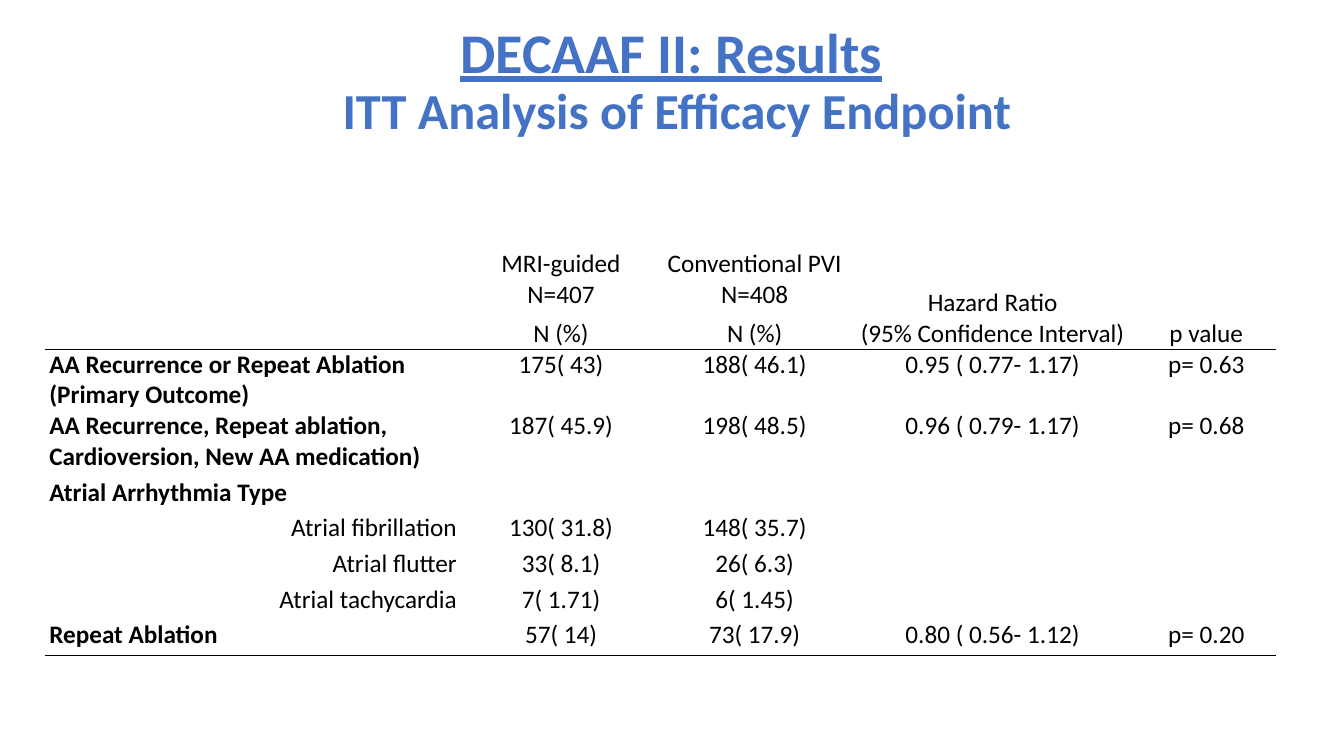
"""Build the DECAAF II efficacy results slide with its table of endpoints."""
from lxml import etree
from pptx import Presentation
from pptx import util as u
from pptx.dml.color import RGBColor
from pptx.enum import text
from pptx.oxml import ns

COLORS = {"title": "4472C4", "body": "000000", "rule": "000000", "cell": "FFFFFF"}
FONT = "Calibri"
COLUMNS = [4.12, 1.99, 1.85, 2.87, 1.37]
ROWS = [0.73, 0.62, 0.61, 0.66] + [1.77 / 5] * 5
HEADER_ROWS = 2
LEFT, CENTER, RIGHT = text.PP_ALIGN.LEFT, text.PP_ALIGN.CENTER, text.PP_ALIGN.RIGHT

HEADERS = {
    (0, 1): ["MRI-guided\vN=407", "N (%)"],
    (0, 2): ["Conventional PVI\vN=408", "N (%)"],
    (1, 3): ["Hazard Ratio\v(95% Confidence Interval)"],
    (1, 4): ["p value"],
}
OUTCOMES = [
    ("AA Recurrence or Repeat Ablation (Primary Outcome)",
     "175( 43)", "188( 46.1)", "0.95 ( 0.77- 1.17)", "p= 0.63"),
    ("AA Recurrence, Repeat ablation, Cardioversion, New AA medication)",
     "187( 45.9)", "198( 48.5)", "0.96 ( 0.79- 1.17)", "p= 0.68"),
    ("Atrial Arrhythmia Type", "", "", "", ""),
    ("Atrial fibrillation", "130( 31.8)", "148( 35.7)", "", ""),
    ("Atrial flutter", "33( 8.1)", "26( 6.3)", "", ""),
    ("Atrial tachycardia", "7( 1.71)", "6( 1.45)", "", ""),
    ("Repeat Ablation", "57( 14)", "73( 17.9)", "0.80 ( 0.56- 1.12)", "p= 0.20"),
]
SUBTYPES = {"Atrial fibrillation", "Atrial flutter", "Atrial tachycardia"}


def style_font(font, size, color, bold=False):
    """Set typeface, size, colour and weight."""
    font.name, font.size, font.bold = FONT, u.Pt(size), bold
    font.color.rgb = RGBColor.from_string(COLORS[color])


def add_title(slide):
    """Add the two-line title, the first line underlined."""
    box = slide.shapes.add_textbox(u.Inches(0.91), u.Inches(0.2), u.Inches(11.5), u.Inches(0.83))
    box.text_frame.word_wrap = True
    heading = box.text_frame.paragraphs[0]
    heading.alignment, heading.line_spacing = CENTER, 0.9
    study = heading.add_run()
    study.text = "DECAAF II: Results"
    style_font(study.font, 40, "title", True)
    study.font.underline = True
    heading.add_line_break()
    analysis = heading.add_run()
    analysis.text = " ITT Analysis of Efficacy Endpoint"
    style_font(analysis.font, 36, "title", True)


def fill_cell(cell, lines, align=CENTER, bold=False):
    """Write paragraphs into a cell on a plain background."""
    cell.fill.solid()
    cell.fill.fore_color.rgb = RGBColor.from_string(COLORS["cell"])
    cell.margin_left = cell.margin_right = u.Inches(0.04)
    cell.margin_top = cell.margin_bottom = 0
    cell.text_frame.text = "\n".join(lines)
    for index, paragraph in enumerate(cell.text_frame.paragraphs):
        paragraph.alignment = align
        style_font(paragraph.font, 18, "body", bold)
        if index:
            paragraph.space_before = u.Pt(6)


def rule_cell(cell, side):
    """Draw a one-point rule on one side of a cell."""
    properties = cell._tc.get_or_add_tcPr()
    line = etree.Element(ns.qn(f"a:{side}"), w=str(u.Pt(1)))
    fill = etree.SubElement(line, ns.qn("a:solidFill"))
    etree.SubElement(fill, ns.qn("a:srgbClr"), val=COLORS["rule"])
    properties.insert(0, line)


def add_results(slide):
    """Add the table of outcomes by treatment arm."""
    frame = slide.shapes.add_table(
        len(ROWS), len(COLUMNS), u.Inches(0.45), u.Inches(1.75),
        u.Inches(sum(COLUMNS)), u.Inches(sum(ROWS)))
    results = frame.table
    results.first_row = results.horz_banding = False
    for column, width in zip(results.columns, COLUMNS):
        column.width = u.Inches(width)
    for row, height in zip(results.rows, ROWS):
        row.height = u.Inches(height)

    for row in range(HEADER_ROWS):
        for column in range(len(COLUMNS)):
            cell = results.cell(row, column)
            fill_cell(cell, HEADERS.get((row, column), [""]))
            cell.vertical_anchor = text.MSO_ANCHOR.BOTTOM
    for row, outcome in enumerate(OUTCOMES, HEADER_ROWS):
        subtype = outcome[0] in SUBTYPES
        fill_cell(results.cell(row, 0), outcome[:1], RIGHT if subtype else LEFT, not subtype)
        for column, value in enumerate(outcome[1:], 1):
            fill_cell(results.cell(row, column), [value])

    for column in range(len(COLUMNS)):
        rule_cell(results.cell(HEADER_ROWS - 1, column), "lnB")
        rule_cell(results.cell(HEADER_ROWS, column), "lnT")
        rule_cell(results.cell(len(ROWS) - 1, column), "lnB")
    for arm in (1, 2):
        rule_cell(results.cell(0, arm), "lnB")
        results.cell(0, arm).merge(results.cell(1, arm))
    results.cell(0, 3).merge(results.cell(0, 4))


def main():
    """Create and save the slide."""
    deck = Presentation()
    deck.slide_width, deck.slide_height = u.Inches(13.33), u.Inches(7.5)
    slide = deck.slides.add_slide(deck.slide_layouts[6])
    add_title(slide)
    add_results(slide)
    deck.save("out.pptx")


if __name__ == "__main__":
    main()
